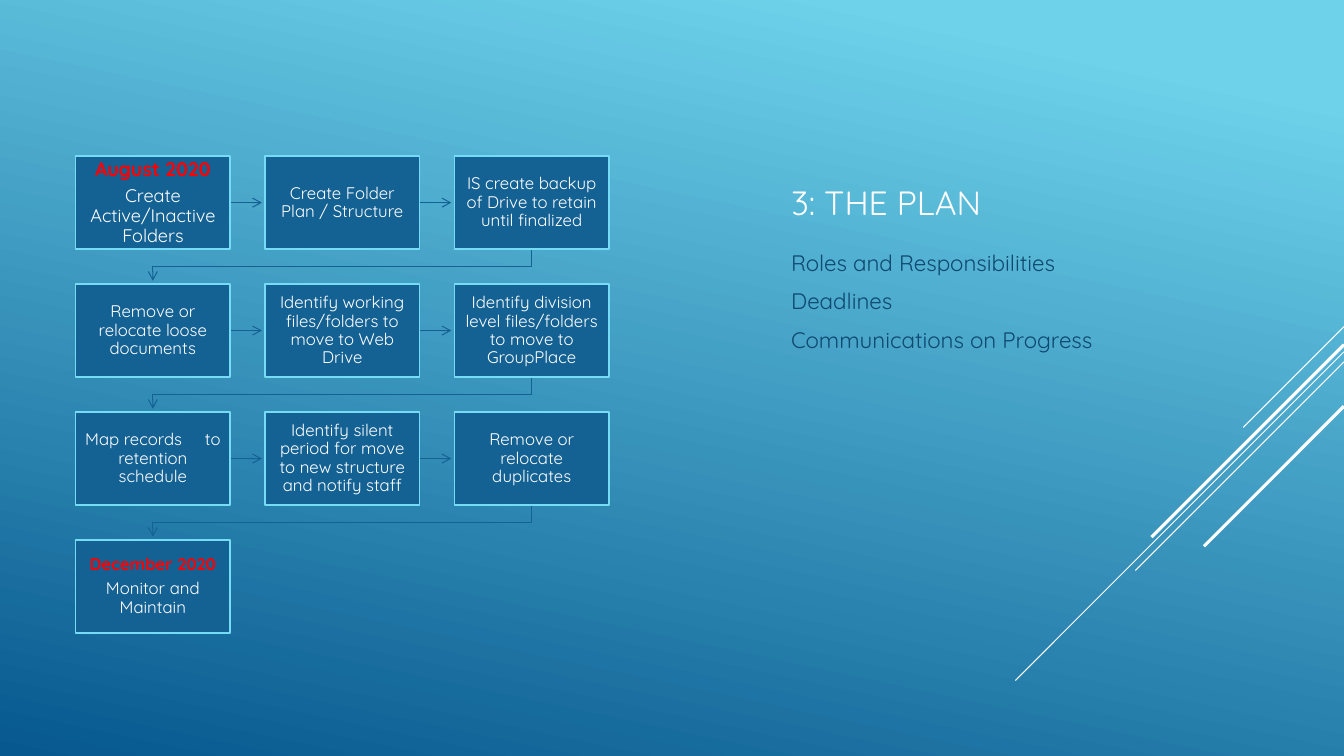
from dataclasses import dataclass
from typing import NamedTuple

from lxml import etree
from pptx import Presentation
from pptx.dml.color import RGBColor
from pptx.enum.shapes import MSO_CONNECTOR, MSO_SHAPE
from pptx.enum.text import MSO_ANCHOR, PP_ALIGN
from pptx.oxml.ns import qn
from pptx.util import Pt

RECT = MSO_SHAPE.RECTANGLE
STRAIGHT = MSO_CONNECTOR.STRAIGHT
LEFT, CENTER = PP_ALIGN.LEFT, PP_ALIGN.CENTER
TOP, MIDDLE, BOTTOM = MSO_ANCHOR.TOP, MSO_ANCHOR.MIDDLE, MSO_ANCHOR.BOTTOM


@dataclass(frozen=True)
class Theme:
    font: str = "Quicksand"
    white: str = "FFFFFF"
    red: str = "FF0000"
    navy: str = "0F496F"
    box: str = "146194"
    edge: str = "76DBF4"
    sky: str = "6ED2EB"
    deep: str = "06588E"
    title: float = 24
    body: float = 16
    date: float = 14
    task: float = 13
    step: float = 12


THEME = Theme()


class Run(NamedTuple):
    text: str
    size: float = THEME.step
    color: str = THEME.white
    bold: bool = False
    track: float = 0  # extra letter spacing


class Ray(NamedTuple):
    y: float
    reach: float
    width: float


# Each step is a list of paragraphs, each paragraph a list of runs
STEPS: list[list[list[Run]]] = [
    [[Run("August 2020", THEME.date, THEME.red, True)],
     [Run("Create Active/Inactive Folders", THEME.task)]],
    [[Run("Create Folder Plan / Structure")]],
    [[Run("IS create backup of Drive to retain until finalized")]],
    [[Run("Remove or relocate loose documents")]],
    [[Run("Identify working files/folders to move to Web Drive")]],
    [[Run("Identify division level files/folders to move to GroupPlace")]],
    [[Run("Map records"), Run(" ", track=13), Run("to retention schedule")]],
    [[Run("Identify silent period for move to new structure and notify staff")]],
    [[Run("Remove or relocate duplicates")]],
    [[Run("December 2020", color=THEME.red, bold=True)],
     [Run("Monitor and Maintain")]],
]
TOPICS = ["Roles and Responsibilities", "Deadlines", "Communications on Progress"]
RAYS = [
    Ray(233.3, 72, 0.75),
    Ray(251.3, 234.7, 0.75),
    Ray(258.5, 149, 0.75),
    Ray(246.2, 137.5, 2.25),
    Ray(290.2, 100, 2.25),
]

# Slide and step grid, in points
WIDE, HIGH = 960, 540
COLS = 3
GRID_X, GRID_Y = 54, 111.6
BOX_W, BOX_H = 110.4, 66.3
STEP_X, STEP_Y = 135.3, 91.4
INSET_X, INSET_Y = 5.1, 5.8
REACH = 22.7  # arrow length between two boxes
TEXT_X, TEXT_W = 558, 288


def rgb(code: str) -> RGBColor:
    return RGBColor.from_string(code)


def add_run(para, run: Run) -> None:
    item = para.add_run()
    item.text = run.text
    item.font.name = THEME.font
    item.font.size = Pt(run.size)
    item.font.bold = run.bold
    item.font.color.rgb = rgb(run.color)
    if run.track:
        item.font._element.set("spc", str(int(run.track * 100)))


def fill_text(frame, paras: list[list[Run]], align, anchor,
              before: float = 0, after: float = 0, pitch: float = 1) -> None:
    """Write paragraphs; before and after are shares of the type size."""
    frame.word_wrap = True
    frame.vertical_anchor = anchor
    for i, runs in enumerate(paras):
        para = frame.paragraphs[0] if i == 0 else frame.add_paragraph()
        para.alignment = align
        para.line_spacing = pitch
        para.space_before = Pt(before * runs[0].size if i else 0)
        para.space_after = Pt(after * runs[0].size if i < len(paras) - 1 else 0)
        for run in runs:
            add_run(para, run)


def style_line(shape, color: str, width: float, arrow: bool = False) -> None:
    shape.line.color.rgb = rgb(color)
    shape.line.width = Pt(width)
    props = shape.element.spPr
    if arrow:
        etree.SubElement(props.find(qn("a:ln")), qn("a:tailEnd"), type="arrow")
    etree.SubElement(props, qn("a:effectLst"))


def add_line(slide, x1: float, y1: float, x2: float, y2: float,
             color: str, width: float, arrow: bool = False) -> None:
    line = slide.shapes.add_connector(STRAIGHT, Pt(x1), Pt(y1), Pt(x2), Pt(y2))
    style_line(line, color, width, arrow)


def add_turn(slide, x: float, y: float) -> None:
    """Draw the bent arrow from a row's last box to the next row."""
    start = GRID_X + BOX_W / 2
    bend = y + (STEP_Y - BOX_H) / 2
    maker = slide.shapes.build_freeform(Pt(x), Pt(y))
    points = [(x, bend), (start, bend), (start, y + REACH)]
    maker.add_line_segments([(Pt(a), Pt(b)) for a, b in points], close=False)
    turn = maker.convert_to_shape()
    turn.fill.background()
    style_line(turn, THEME.box, 0.75, arrow=True)


def add_step(slide, rank: int, paras: list[list[Run]]) -> None:
    row, col = divmod(rank, COLS)
    x, y = GRID_X + col * STEP_X, GRID_Y + row * STEP_Y
    # Arrow to the next step
    if rank < len(STEPS) - 1:
        if col < COLS - 1:
            side, mid = x + BOX_W, y + BOX_H / 2
            add_line(slide, side, mid, side + REACH, mid, THEME.box, 0.75, True)
        else:
            add_turn(slide, x + BOX_W / 2, y + BOX_H)
    # Box with its text
    box = slide.shapes.add_shape(RECT, Pt(x), Pt(y), Pt(BOX_W), Pt(BOX_H))
    box.shadow.inherit = False
    box.fill.solid()
    box.fill.fore_color.rgb = rgb(THEME.box)
    box.line.color.rgb = rgb(THEME.edge)
    box.line.width = Pt(1.25)
    frame = box.text_frame
    frame.margin_left = frame.margin_right = Pt(INSET_X)
    frame.margin_top = frame.margin_bottom = Pt(INSET_Y)
    fill_text(frame, paras, CENTER, MIDDLE, after=0.35, pitch=0.9)


def main() -> None:
    deck = Presentation()
    deck.slide_width, deck.slide_height = Pt(WIDE), Pt(HIGH)
    slide = deck.slides.add_slide(deck.slide_layouts[5])

    # Backdrop
    fill = slide.background.fill
    fill.gradient()
    fill.gradient_angle = 258
    for stop, code, place in zip(fill.gradient_stops, (THEME.sky, THEME.deep), (0.1, 1)):
        stop.color.rgb = rgb(code)
        stop.position = place
    for ray in RAYS:
        add_line(slide, WIDE, ray.y, WIDE - ray.reach, ray.y + ray.reach,
                 THEME.white, ray.width)

    # Title and topics
    title = slide.shapes.title
    title.left, title.top, title.width, title.height = Pt(TEXT_X), Pt(54), Pt(TEXT_W), Pt(108)
    fill_text(title.text_frame, [[Run("3: THE PLAN", THEME.title)]], LEFT, BOTTOM)
    body = slide.shapes.add_textbox(Pt(TEXT_X), Pt(174.2), Pt(TEXT_W), Pt(165))
    topics = [[Run(topic, THEME.body, THEME.navy)] for topic in TOPICS]
    fill_text(body.text_frame, topics, LEFT, TOP, before=0.14, after=0.375)

    # Steps
    for rank, paras in enumerate(STEPS):
        add_step(slide, rank, paras)

    deck.save("out.pptx")


if __name__ == "__main__":
    main()
